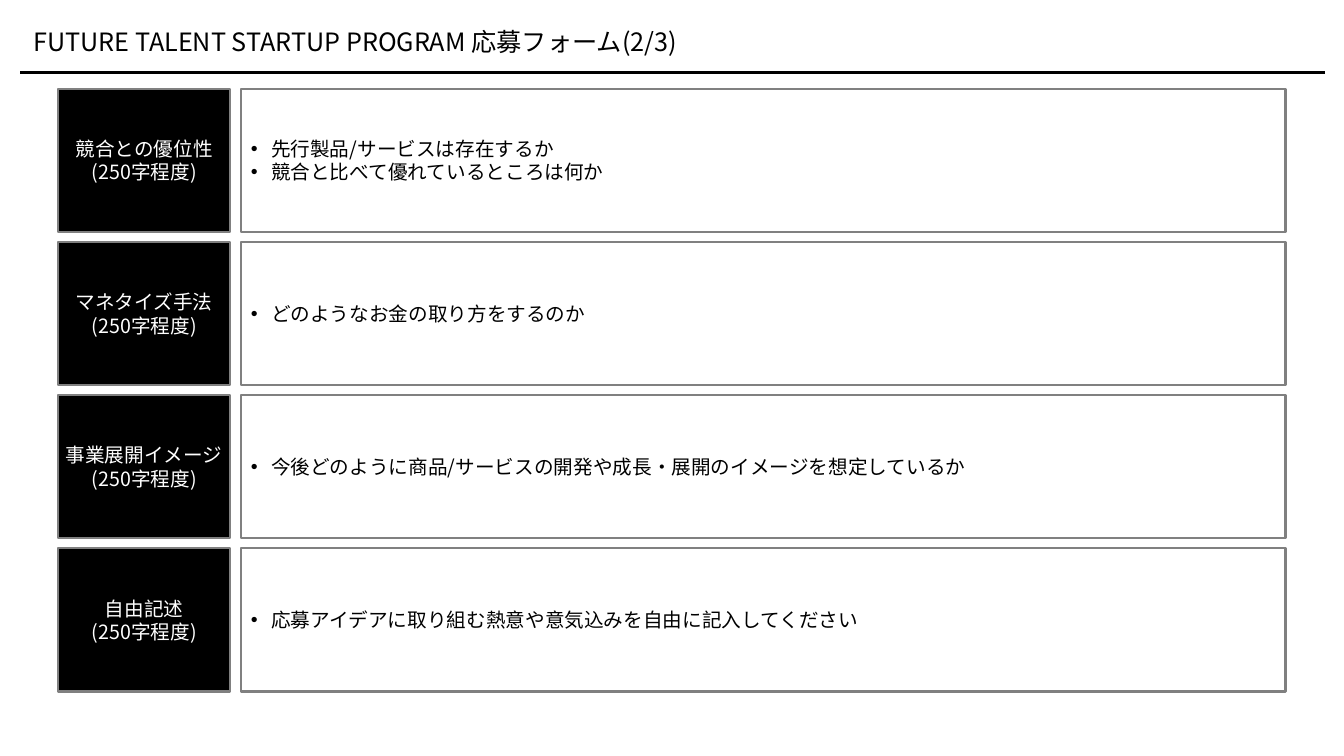
from dataclasses import dataclass

from lxml import etree
from pptx import Presentation
from pptx.dml.color import RGBColor
from pptx.enum.shapes import MSO_CONNECTOR, MSO_SHAPE
from pptx.enum.text import MSO_ANCHOR, MSO_AUTO_SIZE, PP_ALIGN
from pptx.oxml.ns import qn
from pptx.util import Inches, Pt

RECTANGLE = MSO_SHAPE.RECTANGLE
STRAIGHT = MSO_CONNECTOR.STRAIGHT
MIDDLE = MSO_ANCHOR.MIDDLE
LEFT, CENTER = PP_ALIGN.LEFT, PP_ALIGN.CENTER


@dataclass(frozen=True)
class Theme:
    black: RGBColor = RGBColor(0x00, 0x00, 0x00)
    white: RGBColor = RGBColor(0xFF, 0xFF, 0xFF)
    border: RGBColor = RGBColor(0x80, 0x80, 0x80)
    font: str = "Noto Sans CJK JP"
    title_size: Pt = Pt(18)
    body_size: Pt = Pt(14)
    line_width: Pt = Pt(1.5)


theme = Theme()


def format_paragraph(para, size, color, alignment):
    para.alignment = alignment
    para.font.name = theme.font
    para.font.size = size
    para.font.color.rgb = color
    defaults = para._p.pPr.find(qn("a:defRPr"))
    etree.SubElement(defaults, qn("a:ea"), typeface=theme.font)


def add_box(left, top, width, lines, fill, color, bulleted):
    box = page.shapes.add_shape(
        RECTANGLE, Inches(left), Inches(top), Inches(width), Inches(ROW_HEIGHT))
    box.shadow.inherit = False
    box.fill.solid()
    box.fill.fore_color.rgb = fill
    box.line.color.rgb = theme.border
    box.line.width = theme.line_width
    frame = box.text_frame
    frame.word_wrap = bulleted
    frame.vertical_anchor = MIDDLE
    for index, line in enumerate(lines):
        para = frame.add_paragraph() if index else frame.paragraphs[0]
        para.text = line
        if bulleted:
            properties = para._p.get_or_add_pPr()
            properties.set("marL", str(Inches(0.2)))
            properties.set("indent", str(Inches(-0.2)))
            etree.SubElement(properties, qn("a:buFont"), typeface="Arial")
            etree.SubElement(properties, qn("a:buChar"), char="•")
        format_paragraph(para, theme.body_size, color, LEFT if bulleted else CENTER)


deck = Presentation()
deck.slide_width = Inches(13.33)
deck.slide_height = Inches(7.5)
page = deck.slides.add_slide(deck.slide_layouts.get_by_name("Title Only"))

# Title
title = page.shapes.title
title.left, title.top = Inches(0.23), Inches(0.28)
title.width, title.height = Inches(9.68), Inches(0.3)
title_frame = title.text_frame
title_frame.text = "FUTURE TALENT STARTUP PROGRAM 応募フォーム(2/3)"
title_frame.auto_size = MSO_AUTO_SIZE.NONE
title_frame.vertical_anchor = MIDDLE
title_frame.margin_top = title_frame.margin_bottom = 0
title_frame.paragraphs[0].line_spacing = 0.9
format_paragraph(title_frame.paragraphs[0], theme.title_size, theme.black, LEFT)

# Rule under the title
rule = page.shapes.add_connector(
    STRAIGHT, Inches(0.2), Inches(0.72), Inches(13.14), Inches(0.72))
rule.line.color.rgb = theme.black
rule.line.width = theme.line_width
etree.SubElement(rule._element.spPr, qn("a:effectLst"))

# Form rows: heading on the left, guidance on the right
FIRST_TOP, ROW_HEIGHT, ROW_PITCH = 0.88, 1.42, 1.52
LENGTH_NOTE = "(250字程度)"
questions = [
    ("競合との優位性", ["先行製品/サービスは存在するか", "競合と比べて優れているところは何か"]),
    ("マネタイズ手法", ["どのようなお金の取り方をするのか"]),
    ("事業展開イメージ", ["今後どのように商品/サービスの開発や成長・展開のイメージを想定しているか"]),
    ("自由記述", ["応募アイデアに取り組む熱意や意気込みを自由に記入してください"]),
]
for row, (heading, guidance) in enumerate(questions):
    top = FIRST_TOP + row * ROW_PITCH
    add_box(0.58, top, 1.7, [heading, LENGTH_NOTE], theme.black, theme.white, False)
    add_box(2.39, top, 10.36, guidance, theme.white, theme.black, True)

deck.save("out.pptx")
